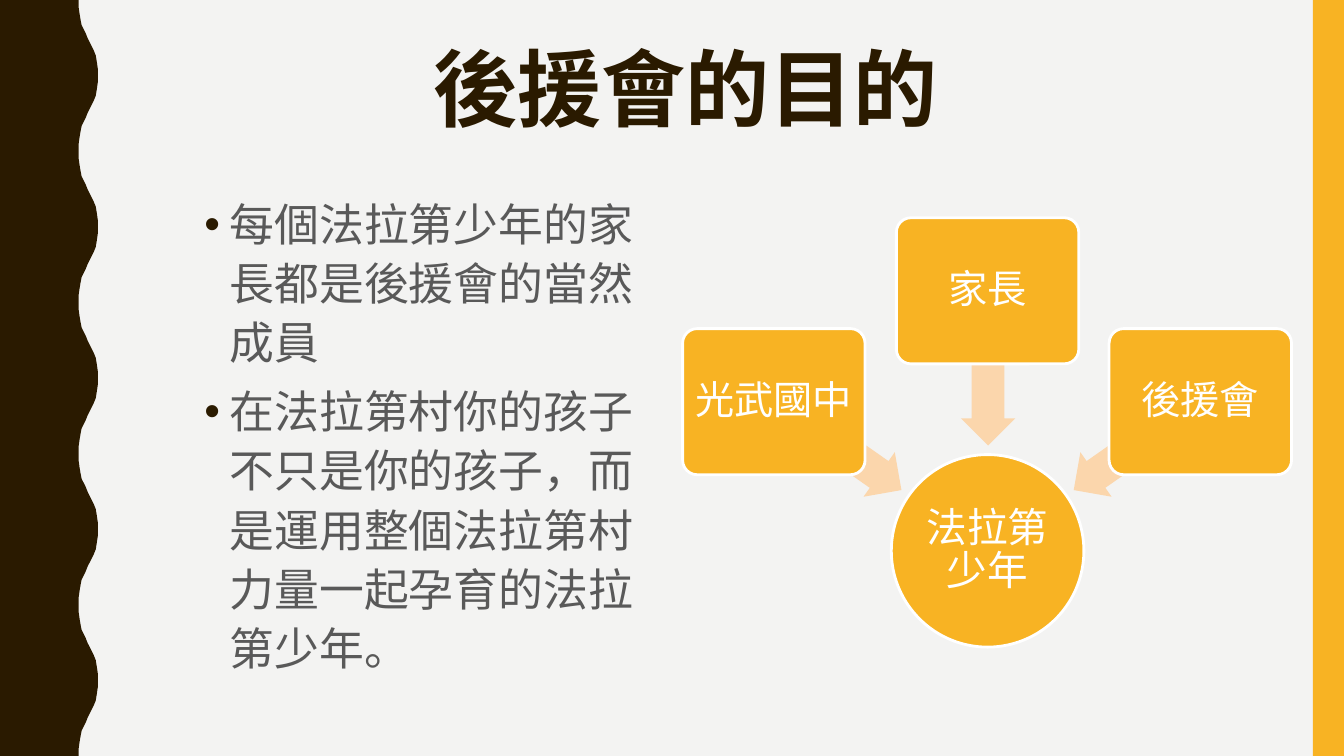
from lxml import etree
from pptx import Presentation
from pptx.dml.color import RGBColor
from pptx.enum.shapes import MSO_SHAPE
from pptx.enum.text import MSO_ANCHOR, MSO_AUTO_SIZE, PP_ALIGN
from pptx.oxml.ns import qn
from pptx.util import Pt

PX = 9144
W, H = 1333, 750
RECT, ROUND = MSO_SHAPE.RECTANGLE, MSO_SHAPE.ROUNDED_RECTANGLE
OVAL, ARROW = MSO_SHAPE.OVAL, MSO_SHAPE.LEFT_ARROW
CENTER = PP_ALIGN.CENTER
TOP, MIDDLE = MSO_ANCHOR.TOP, MSO_ANCHOR.MIDDLE
BROWN, GOLD, PEACH = "2A1A00", "F8B323", "FBD6AC"
WHITE, GRAY, PAPER = "FFFFFF", "595959", "F3F3F2"
CJK = "Noto Sans CJK TC"


def paint(shape, fill, line=None):
    shape.shadow.inherit = False
    shape.fill.solid()
    shape.fill.fore_color.rgb = RGBColor.from_string(fill)
    if line:
        shape.line.color.rgb = RGBColor.from_string(line)
        shape.line.width = Pt(2)
    else:
        shape.line.fill.background()


def write(p, text, size, color, font, spacing, align=None, bold=False):
    p.text = text
    p.alignment = align
    p.line_spacing = spacing
    p.font.size = Pt(size)
    p.font.bold = bold
    p.font.name = font
    p.font.color.rgb = RGBColor.from_string(color)
    latin = p._p.pPr.find(qn("a:defRPr")).find(qn("a:latin"))
    ea = etree.Element(qn("a:ea"), typeface=CJK)
    latin.addnext(ea)


prs = Presentation()
prs.slide_width, prs.slide_height = W * PX, H * PX
s = prs.slides.add_slide(prs.slide_layouts[5])
s.background.fill.solid()
s.background.fill.fore_color.rgb = RGBColor.from_string(PAPER)

edge_x = [78, 78, 79, 80, 81, 83, 85, 87, 89, 91, 93, 95, 96, 97, 97]
edge_y = [0, 7, 14, 20, 25, 29, 33, 38, 42, 46, 50, 55, 61, 68, 75]
half = list(zip(edge_x, edge_y))
wave = half + [(x, 150 - y) for x, y in reversed(half[:-1])]
points = [(x, y + top) for top in range(0, H, 150) for x, y in wave]
fb = s.shapes.build_freeform(0, 0, scale=PX)
fb.add_line_segments(points + [(0, H)], close=True)
paint(fb.convert_to_shape(), BROWN)

bar = s.shapes.add_shape(RECT, 1302 * PX, 0, 31 * PX, H * PX)
paint(bar, GOLD)

title = s.shapes.title
title.left, title.top, title.width, title.height = [v * PX for v in (136, 43, 1087, 163)]
tf = title.text_frame
tf.auto_size = MSO_AUTO_SIZE.NONE
tf.vertical_anchor = TOP
write(tf.paragraphs[0], "後援會的目的", 60, BROWN, "Arial", 0.9, CENTER, True)

body = s.shapes.add_textbox(193 * PX, 185 * PX, 463 * PX, 502 * PX)
tf = body.text_frame
tf.word_wrap = True
purposes = [
    "每個法拉第少年的家長都是後援會的當然成員",
    "在法拉第村你的孩子不只是你的孩子，而是運用整個法拉第村力量一起孕育的法拉第少年。",
]
for i, text in enumerate(purposes):
    p = tf.add_paragraph() if i else tf.paragraphs[0]
    write(p, text, 32, GRAY, "Arial", 1.1)
    p.space_before = Pt(7 * i)
    pPr = p._p.pPr
    pPr.set("marL", str(25 * PX))
    pPr.set("indent", str(-25 * PX))
    color = etree.Element(qn("a:buClr"))
    etree.SubElement(color, qn("a:srgbClr"), val=BROWN)
    font = etree.Element(qn("a:buFont"), typeface="Arial")
    char = etree.Element(qn("a:buChar"), char="•")
    for bullet in (color, font, char):
        pPr.find(qn("a:defRPr")).addprevious(bullet)

nodes = [(OVAL, "法拉第少年", 884, 451, 191, 191, 29, 2, None)]
for text, x, y, arrow in [
    ("光武國中", 677, 326, (754, 415, 215)),
    ("家長", 889, 216, (903, 338, 270)),
    ("後援會", 1100, 326, (1051, 415, 325)),
]:
    nodes.append((ROUND, text, x, y, 181, 145, 28, 6, arrow))

for kind, text, x, y, w, h, size, inset, arrow in nodes:
    if arrow:
        left, top, angle = arrow
        sp = s.shapes.add_shape(ARROW, left * PX, top * PX, 154 * PX, 54 * PX)
        sp.adjustments[0] = 0.6
        sp.rotation = angle
        paint(sp, PEACH)
    sp = s.shapes.add_shape(kind, x * PX, y * PX, w * PX, h * PX)
    if kind == ROUND:
        sp.adjustments[0] = 0.1
    paint(sp, GOLD, WHITE)
    tf = sp.text_frame
    tf.word_wrap = True
    tf.vertical_anchor = MIDDLE
    tf.margin_left = tf.margin_right = tf.margin_top = tf.margin_bottom = inset * PX
    write(tf.paragraphs[0], text, size, WHITE, CJK, 0.9, CENTER)

prs.save("out.pptx")
